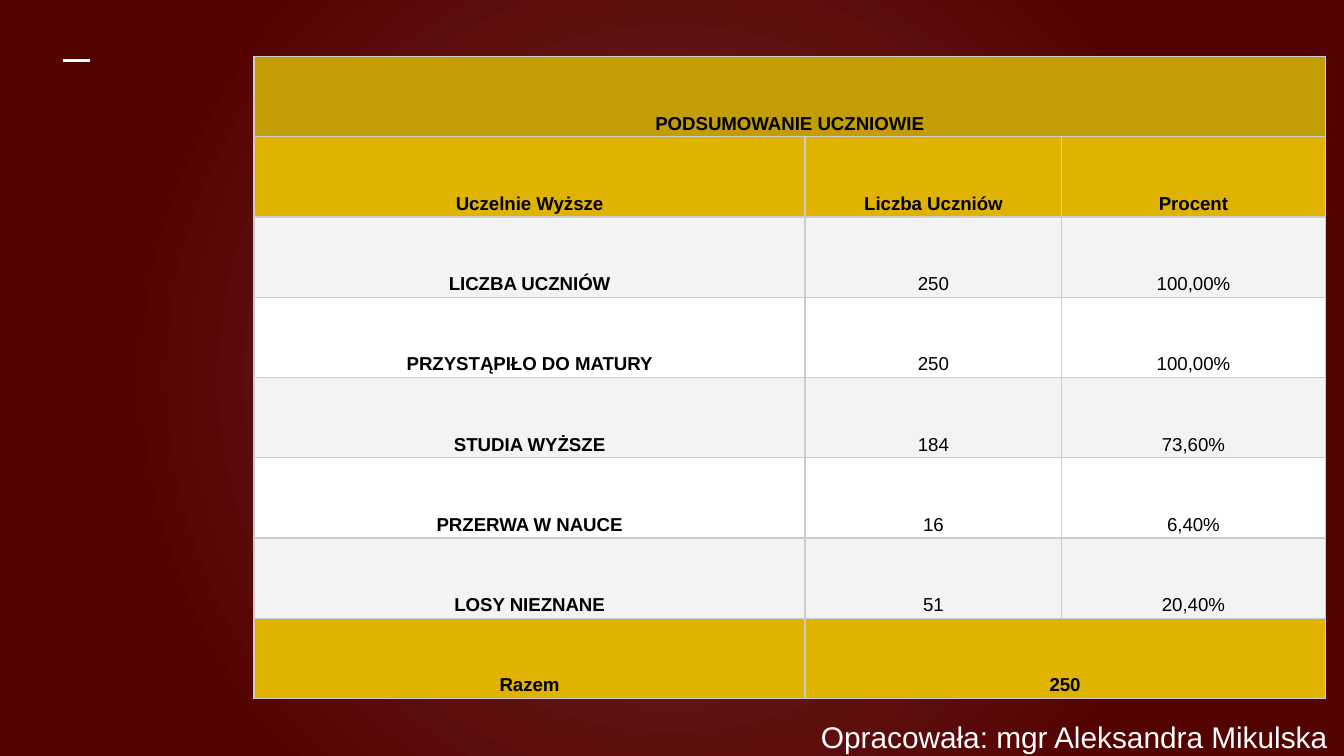
from lxml import etree
from pptx import Presentation
from pptx.dml.color import RGBColor as RGB
from pptx.enum.shapes import MSO_CONNECTOR as LINE
from pptx.enum.text import MSO_ANCHOR as ANCHOR, PP_ALIGN as ALIGN
from pptx.oxml import parse_xml
from pptx.oxml.ns import nsdecls, qn
from pptx.util import Inches, Pt

HUE = {
    "white": "FFFFFF", "black": "000000", "edge": "CCCCCC", "title": "C39D05",
    "gold": "E0B301", "gray": "F3F3F3",
    "glow": "702D2A", "wine": "550202", "dark": "540303",
}


def write(frame, text, size=10, color="black", bold=False, align=ALIGN.LEFT, space=1.0):
    frame.word_wrap = True
    para = frame.paragraphs[0]
    para.alignment = align
    para.line_spacing = space
    run = para.add_run()
    run.text = text
    run.font.name = "Arial"
    run.font.size = Pt(size)
    run.font.bold = bold
    run.font.color.rgb = RGB.from_string(HUE[color])


deck = Presentation()
deck.slide_width, deck.slide_height = Inches(10), Inches(10 * 9 / 16)
slide = deck.slides.add_slide(deck.slide_layouts[6])

stops = "".join(
    f'<a:gs pos="{pos * 1000}"><a:srgbClr val="{HUE[name]}"/></a:gs>'
    for pos, name in [(0, "glow"), (72, "wine"), (100, "dark")]
)
slide.background.fill.gradient()
grad = slide.element.find(".//" + qn("a:gradFill"))
grad.getparent().replace(grad, parse_xml(
    f'<a:gradFill {nsdecls("a")}><a:gsLst>{stops}</a:gsLst><a:path path="circle">'
    '<a:fillToRect l="50000" t="50000" r="50000" b="50000"/></a:path></a:gradFill>'
))

dash = slide.shapes.add_connector(
    LINE.STRAIGHT, Inches(0.47), Inches(0.45), Inches(0.67), Inches(0.45))
dash.line.color.rgb = RGB.from_string(HUE["white"])
dash.line.width = Pt(1.5)
etree.SubElement(dash.element.spPr, qn("a:effectLst"))

rows = [
    ("title", ["PODSUMOWANIE UCZNIOWIE", "", ""]),
    ("gold", ["Uczelnie Wyższe", "Liczba Uczniów", "Procent"]),
    ("gray", ["LICZBA UCZNIÓW", "250", "100,00%"]),
    ("white", ["PRZYSTĄPIŁO DO MATURY", "250", "100,00%"]),
    ("gray", ["STUDIA WYŻSZE", "184", "73,60%"]),
    ("white", ["PRZERWA W NAUCE", "16", "6,40%"]),
    ("gray", ["LOSY NIEZNANE", "51", "20,40%"]),
    ("gold", ["Razem", "250", ""]),
]
wide = [4.1, 1.91, 1.96]
tall = 4.78
table = slide.shapes.add_table(
    len(rows), len(wide), Inches(1.89), Inches(0.42),
    Inches(sum(wide)), Inches(tall)).table
for col, width in zip(table.columns, wide):
    col.width = Inches(width)

for r, (fill, texts) in enumerate(rows):
    table.rows[r].height = Inches(tall / len(rows))
    for c, text in enumerate(texts):
        cell = table.cell(r, c)
        cell.vertical_anchor = ANCHOR.BOTTOM
        cell.margin_left = cell.margin_right = Inches(0.03)
        cell.margin_top = cell.margin_bottom = Inches(0.02)
        cell.fill.solid()
        cell.fill.fore_color.rgb = RGB.from_string(HUE[fill])
        props = cell._tc.get_or_add_tcPr()
        for i, side in enumerate("LRTB"):
            props.insert(i, parse_xml(
                f'<a:ln{side} {nsdecls("a")} w="{Pt(0.75)}"><a:solidFill>'
                f'<a:srgbClr val="{HUE["edge"]}"/></a:solidFill></a:ln{side}>'))
        if text:
            bold = c == 0 or fill == "gold"
            write(cell.text_frame, text, bold=bold, align=ALIGN.CENTER, space=1.15)

table.cell(0, 0).merge(table.cell(0, 2))
table.cell(7, 1).merge(table.cell(7, 2))

box = slide.shapes.add_textbox(Inches(6.01), Inches(5.25), Inches(3.99), Inches(0.38))
frame = box.text_frame
frame.margin_left = frame.margin_right = Inches(0.1)
frame.margin_top = frame.margin_bottom = Inches(0.1)
write(frame, "Opracowała: mgr Aleksandra Mikulska", size=16, color="white")

deck.save("out.pptx")
